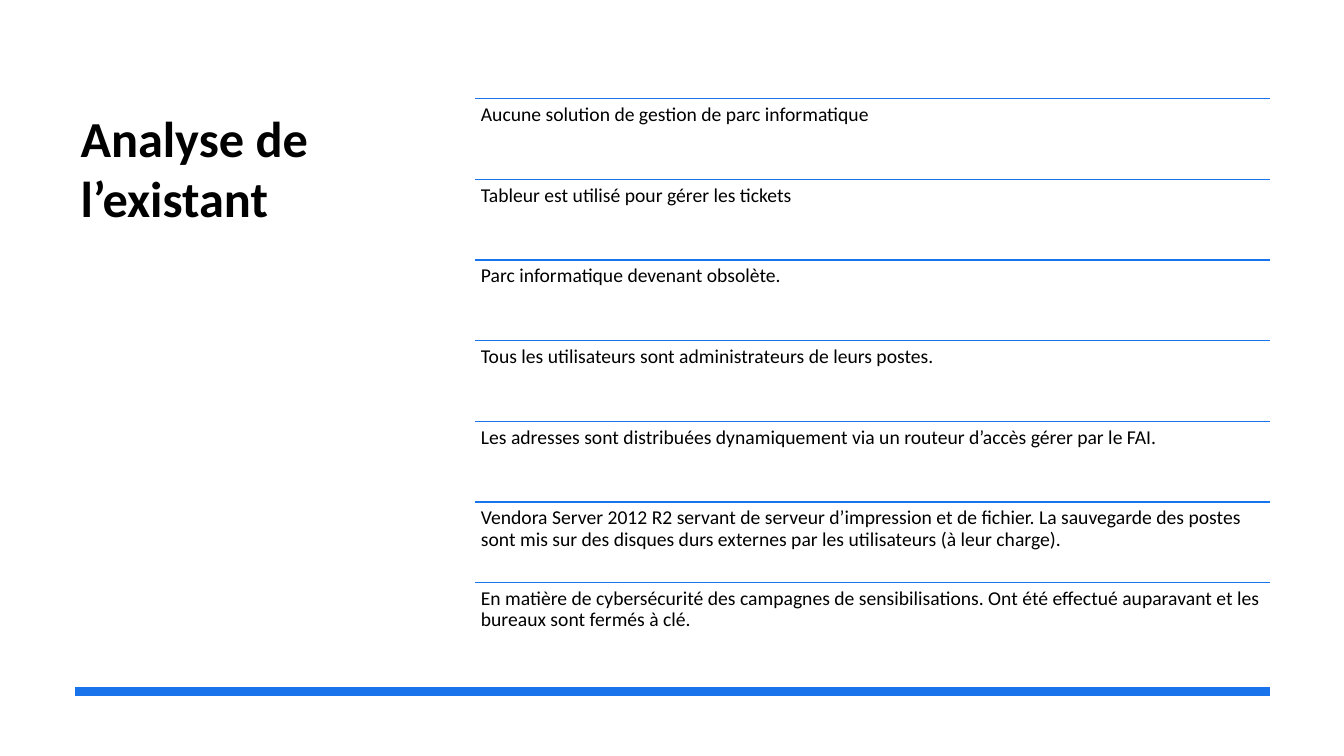
from lxml.etree import SubElement
from pptx import Presentation
from pptx.dml.color import RGBColor
from pptx.enum.shapes import MSO_CONNECTOR as Connector
from pptx.enum.text import MSO_ANCHOR as Anchor
from pptx.oxml.ns import qn
from pptx.util import Inches, Pt

BLUE = RGBColor(0x19, 0x73, 0xEB)
BLACK = RGBColor(0, 0, 0)
FONT = "Calibri"

LIST_LEFT, RIGHT = 4.71, 12.6
LIST_TOP, ROW_HEIGHT = 0.98, 0.8

FINDINGS = [
    "Aucune solution de gestion de parc informatique",
    "Tableur est utilisé pour gérer les tickets",
    "Parc informatique devenant obsolète.",
    "Tous les utilisateurs sont administrateurs de leurs postes.",
    "Les adresses sont distribuées dynamiquement via un routeur d’accès gérer par le FAI.",
    "Vendora Server 2012 R2 servant de serveur d’impression et de fichier. "
    "La sauvegarde des postes sont mis sur des disques durs externes par les "
    "utilisateurs (à leur charge).",
    "En matière de cybersécurité des campagnes de sensibilisations. "
    "Ont été effectué auparavant et les bureaux sont fermés à clé.",
]


def add_rule(shapes, left, top, weight):
    rule = shapes.add_connector(
        Connector.STRAIGHT, Inches(left), Inches(top), Inches(RIGHT), Inches(top))
    rule.line.color.rgb = BLUE
    rule.line.width = Pt(weight)
    SubElement(rule._element.spPr, qn("a:effectLst"))


def add_text(shapes, left, top, width, height, inset, words, size, bold=False):
    box = shapes.add_textbox(Inches(left), Inches(top), Inches(width), Inches(height))
    frame = box.text_frame
    frame.word_wrap = True
    frame.vertical_anchor = Anchor.TOP
    frame.margin_left = frame.margin_right = Inches(inset)
    frame.margin_top = frame.margin_bottom = Inches(min(inset, 0.06))
    para = frame.paragraphs[0]
    span = para.add_run()
    span.text = words
    span.font.name = FONT
    span.font.size = Pt(size)
    span.font.bold = bold
    span.font.color.rgb = BLACK
    return para


deck = Presentation()
deck.slide_width, deck.slide_height = Inches(13.33), Inches(7.5)
page = deck.slides.add_slide(deck.slide_layouts[6])

add_text(page.shapes, 0.7, 1, 3.28, 4.55, 0.1, "Analyse de l’existant", 36, bold=True)
add_rule(page.shapes, 0.74, 6.86, 6)

findings_group = page.shapes.add_group_shape()
for row, finding in enumerate(FINDINGS):
    top = LIST_TOP + row * ROW_HEIGHT
    add_rule(findings_group.shapes, LIST_LEFT, top, 1)
    para = add_text(findings_group.shapes, LIST_LEFT, top, RIGHT - LIST_LEFT,
                    ROW_HEIGHT, 0.06, finding, 14)
    para.line_spacing = 0.9

deck.save("out.pptx")
